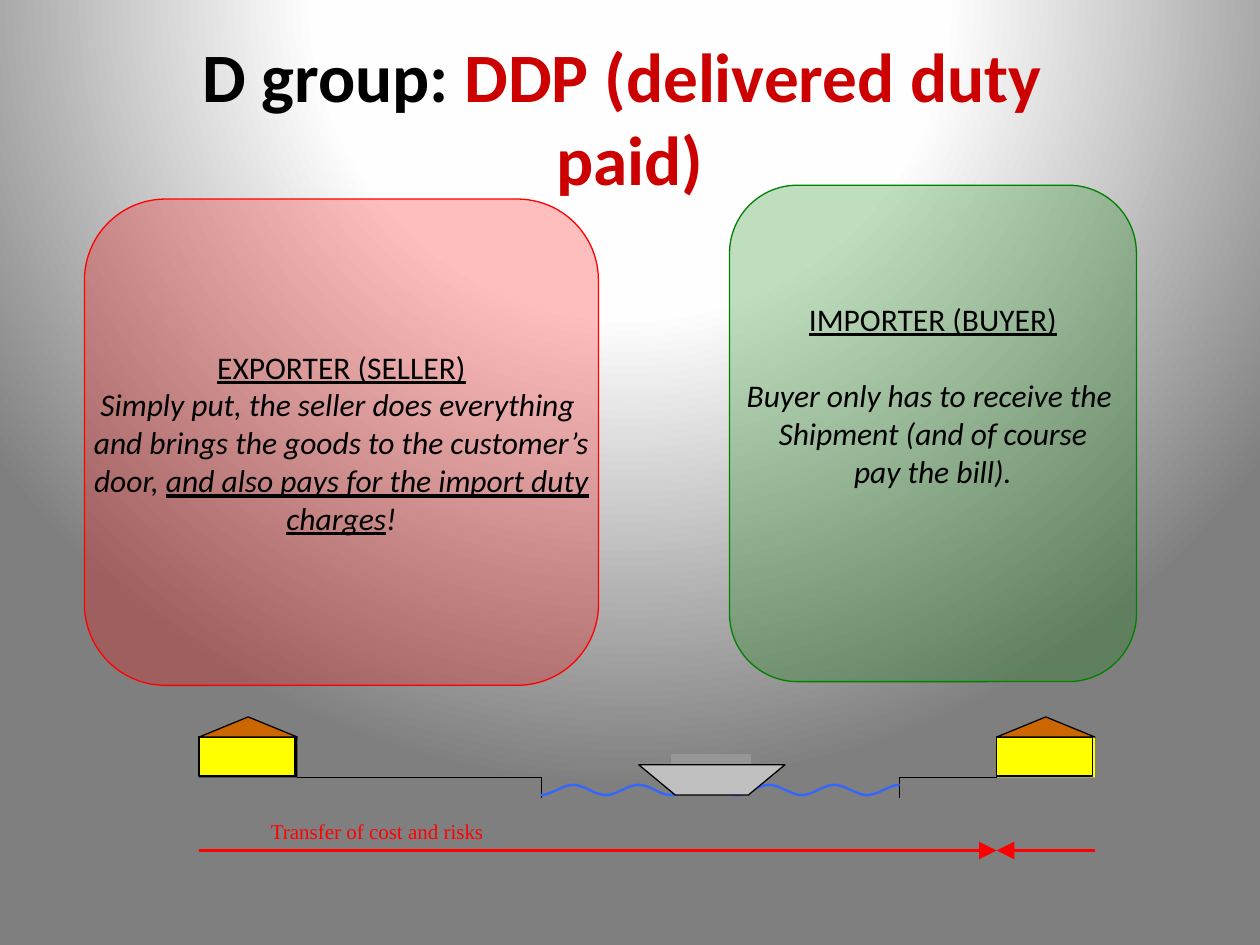
from math import cos, pi

from lxml.etree import SubElement
from pptx import Presentation
from pptx.dml.color import RGBColor
from pptx.enum.shapes import MSO_CONNECTOR, MSO_SHAPE
from pptx.enum.text import MSO_ANCHOR, MSO_AUTO_SIZE, PP_ALIGN
from pptx.oxml import parse_xml
from pptx.oxml.ns import nsdecls, qn
from pptx.util import Inches, Pt

THEME = {
    "black": "000000", "heading": "CC0000", "red": "FF0000", "green": "008000",
    "wall": "FFFF00", "roof": "CC6600", "water": "3366FF",
    "hull": "C0C0C0", "cabin": "969696",
    "font": "Calibri", "label_font": "Times New Roman",
    "title_size": 39.6, "body_size": 18, "label_size": 12,
    "thin": 0.75, "arrow": 2,
}

# Content: a run is (text, style), with styles "i" italic, "u" underlined
TITLE = [("D group: ", "black"), ("DDP (delivered duty ", "heading"), ("paid)", "heading")]
PANELS = [
    {"at": (0.67, 1.58, 4.08, 3.86), "colour": "red", "heading_gap": 0, "bottom": 0.05,
     "lines": [
         [("EXPORTER (SELLER)", "u")],
         [("Simply put, the seller does everything ", "i")],
         [("and brings the goods to the customer’s", "i")],
         [("door, ", "i"), ("and also pays for the import duty", "iu")],
         [("charges", "iu"), ("!", "i")]]},
    {"at": (5.79, 1.47, 3.23, 3.94), "colour": "green", "heading_gap": 22, "bottom": 0.66,
     "lines": [
         [("IMPORTER (BUYER)", "u")],
         [("Buyer only has to receive the ", "i")],
         [("Shipment (and of course", "i")],
         [("pay the bill).", "i")]]},
]
LABEL = "Transfer of cost and risks"
HOUSES = [(1.58, "black"), (7.91, "wall")]  # left edge, colour of the backing
GROUND, QUAY_FOOT = 6.17, 6.33
SHORES = [((2.36, 4.04), (4.04, 4.3)), ((7.14, 7.91),)]
QUAYS = [4.3, 7.14]
ARROWS = [(1.58, 7.91), (8.69, 7.91)]
ARROW_Y = 6.75


def colour(name):
    return RGBColor.from_string(THEME[name])


def paint(shape, fill, line=None):
    shape.shadow.inherit = False
    shape.fill.solid()
    shape.fill.fore_color.rgb = colour(fill)
    if line:
        shape.line.color.rgb = colour(line)
        shape.line.width = Pt(THEME["thin"])
    else:
        shape.line.fill.background()
    return shape


def add_block(at, fill, line=None, kind=MSO_SHAPE.RECTANGLE):
    return paint(page.shapes.add_shape(kind, *map(Inches, at)), fill, line)


def add_outline(points, fill, line=None):
    corners = [(Inches(x), Inches(y)) for x, y in points]
    builder = page.shapes.build_freeform(*corners[0])
    builder.add_line_segments(corners[1:], close=True)
    return paint(builder.convert_to_shape(), fill, line)


def add_line(start, end, name="black", width=THEME["thin"]):
    line = page.shapes.add_connector(
        MSO_CONNECTOR.STRAIGHT, *map(Inches, (*start, *end)))
    line.line.color.rgb = colour(name)
    line.line.width = Pt(width)
    SubElement(line._element.spPr, qn("a:effectLst"))
    return line


def add_span(para, text, size, name="black", font=THEME["font"]):
    span = para.add_run()
    span.text = text
    span.font.name = font
    span.font.size = Pt(size)
    span.font.color.rgb = colour(name)
    return span


deck = Presentation()
deck.slide_width, deck.slide_height = Inches(10), Inches(7.5)
page = deck.slides.add_slide(deck.slide_layouts[5])

# Spotlight background
stops = "".join(
    f'<a:gs pos="{pos * 1000}"><a:srgbClr val="{value}"/></a:gs>'
    for pos, value in [(0, "FFFFFF"), (40, "FEFEFE"), (100, "7F7F7F")])
page._element.cSld.insert(0, parse_xml(
    f'<p:bg {nsdecls("p", "a")}><p:bgPr><a:gradFill rotWithShape="1">'
    f'<a:gsLst>{stops}</a:gsLst><a:path path="circle">'
    '<a:fillToRect l="50000" t="-80000" r="50000" b="180000"/></a:path>'
    '</a:gradFill><a:effectLst/></p:bgPr></p:bg>'))

# Title
title = page.shapes.title
title.left, title.top, title.width, title.height = map(Inches, (0.5, 0.3, 9, 1.25))
title.text_frame.vertical_anchor = MSO_ANCHOR.MIDDLE
title.text_frame.auto_size = MSO_AUTO_SIZE.NONE
para = title.text_frame.paragraphs[0]
para.alignment = PP_ALIGN.CENTER
for index, (text, name) in enumerate(TITLE):
    if index == len(TITLE) - 1:
        para.add_line_break()
    add_span(para, text, THEME["title_size"], name).font.bold = True

# Label above the arrows
box = page.shapes.add_textbox(*map(Inches, (2.15, 6.5, 1.82, 0.2)))
frame = box.text_frame
frame.margin_left = frame.margin_top = frame.margin_right = frame.margin_bottom = 0
frame.word_wrap = False
frame.auto_size = MSO_AUTO_SIZE.SHAPE_TO_FIT_TEXT
add_span(frame.paragraphs[0], LABEL, THEME["label_size"], "red", THEME["label_font"])

# Houses
for left, backing in HOUSES:
    add_block((left, 5.85, 0.78, 0.32), backing)
    add_block((left, 5.85, 0.76, 0.31), "wall", "black")
    add_outline([(left + 0.39, 5.69), (left, 5.85), (left + 0.78, 5.85)], "roof", "black")

# Shores and quay walls
for shore in SHORES:
    for start, end in shore:
        add_line((start, GROUND), (end, GROUND))
for quay in QUAYS:
    add_line((quay, GROUND), (quay, QUAY_FOOT))

# Sea: a ribbon between two shifted waves, troughs 0.52 in apart
SEA_LEFT, SEA_WIDTH, WAVES, STEPS = 4.29, 2.85, 5.5, 110
crest = [(SEA_LEFT + SEA_WIDTH * step / STEPS,
          6.26 + 0.04 * cos(2 * pi * WAVES * step / STEPS)) for step in range(STEPS + 1)]
bed = [(x, y + 0.02) for x, y in reversed(crest)]
add_outline(crest + bed, "water")

# Ship
add_outline([(5.07, 6.07), (5.36, 6.31), (5.94, 6.31), (6.23, 6.07)], "hull", "black")
add_block((5.33, 5.99, 0.63, 0.07), "cabin", "cabin")

# Arrows meeting at the point of transfer
for start, end in ARROWS:
    arrow = add_line((start, ARROW_Y), (end, ARROW_Y), "red", THEME["arrow"])
    SubElement(arrow.line._get_or_add_ln(), qn("a:tailEnd"), type="triangle", w="lg", len="lg")

# Seller and buyer panels
for panel in PANELS:
    shape = add_block(panel["at"], panel["colour"], panel["colour"], MSO_SHAPE.ROUNDED_RECTANGLE)
    shape.adjustments[0] = 0.167
    tint = shape._element.spPr.find(qn("a:solidFill"))[0]
    SubElement(tint, qn("a:alpha"), val="25000")
    frame = shape.text_frame
    frame.word_wrap = False
    frame.vertical_anchor = MSO_ANCHOR.MIDDLE
    frame.margin_bottom = Inches(panel["bottom"])
    for index, line in enumerate(panel["lines"]):
        para = frame.add_paragraph() if index else frame.paragraphs[0]
        para.alignment = PP_ALIGN.CENTER
        if index == 0:
            para.space_after = Pt(panel["heading_gap"])
        for text, style in line:
            span = add_span(para, text, THEME["body_size"])
            span.font.italic = "i" in style
            span.font.underline = "u" in style

deck.save("out.pptx")
